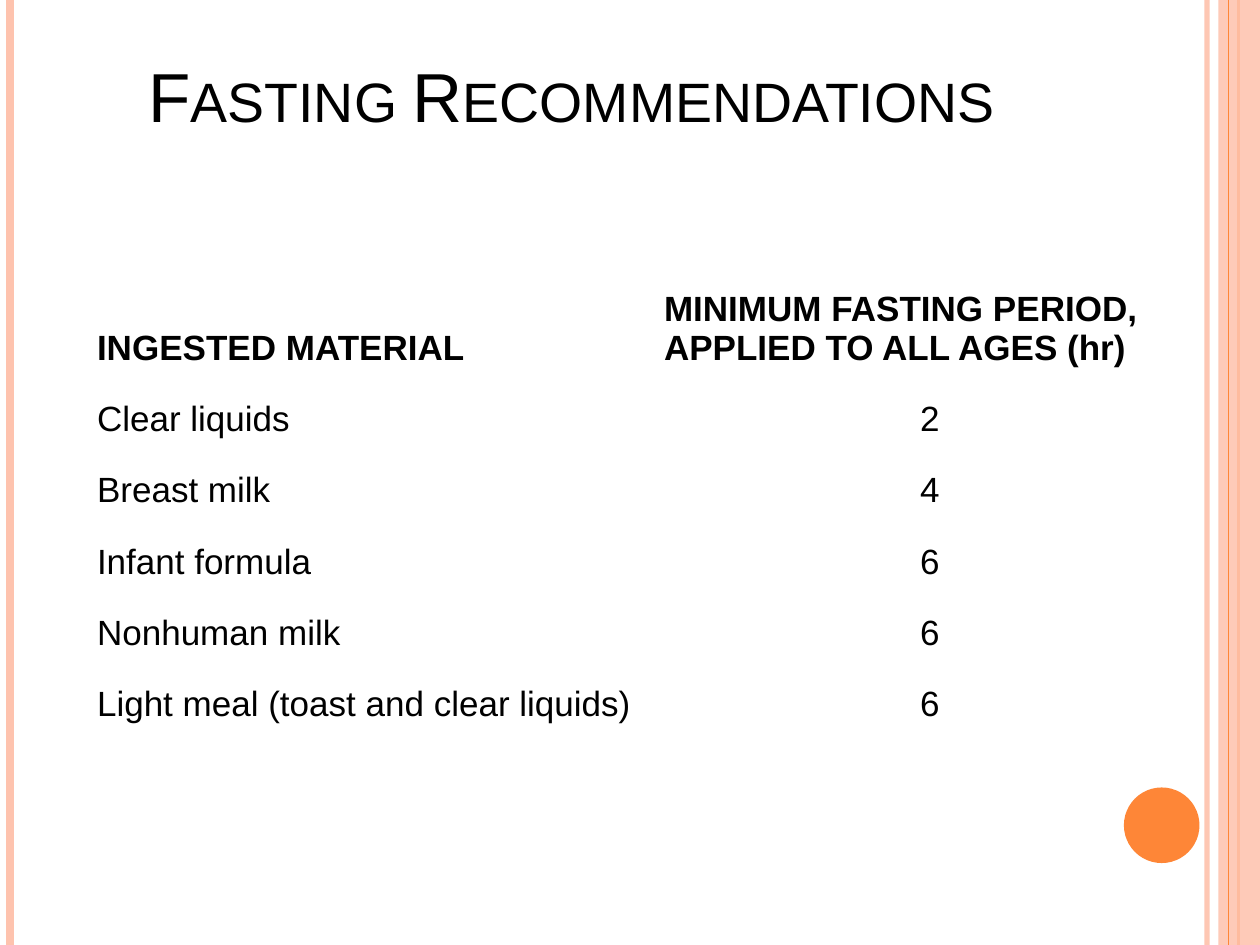
from dataclasses import dataclass

from lxml import etree
from pptx import Presentation
from pptx.dml.color import RGBColor
from pptx.enum.shapes import MSO_CONNECTOR, MSO_SHAPE
from pptx.enum.text import MSO_ANCHOR, PP_ALIGN
from pptx.oxml.ns import qn
from pptx.util import Inches, Pt

NO_STYLE_NO_GRID = "{2D5ABB26-0587-4C30-8999-92F81FD0307C}"

ROWS = [
    ("INGESTED MATERIAL", "MINIMUM FASTING PERIOD, APPLIED TO ALL AGES (hr)"),
    ("Clear liquids", "2"),
    ("Breast milk", "4"),
    ("Infant formula", "6"),
    ("Nonhuman milk", "6"),
    ("Light meal (toast and clear liquids)", "6"),
]


@dataclass(frozen=True)
class Theme:
    font: str = "Arial"
    text: RGBColor = RGBColor(0x00, 0x00, 0x00)
    accent: RGBColor = RGBColor(0xFE, 0x86, 0x37)
    tint: RGBColor = RGBColor(0xFE, 0xC3, 0xAE)
    title_size: float = 39.6
    table_size: float = 20


class SlideBuilder:
    def __init__(self, page, theme):
        self.page = page
        self.theme = theme

    def set_opacity(self, element, percent):
        color = next(element.iter(qn("a:srgbClr")))
        etree.SubElement(color, qn("a:alpha")).set("val", str(percent * 1000))

    def style(self, para, size, bold=False):
        para.font.name = self.theme.font
        para.font.size = Pt(size)
        para.font.bold = bold
        para.font.color.rgb = self.theme.text

    def vertical_rule(self, x, color, width, opacity=100):
        rule = self.page.shapes.add_connector(
            MSO_CONNECTOR.STRAIGHT, Inches(x), 0, Inches(x), Inches(7.5))
        rule.line.color.rgb = color
        rule.line.width = Pt(width)
        properties = rule._element.spPr
        etree.SubElement(properties, qn("a:effectLst"))
        if opacity < 100:
            self.set_opacity(properties, opacity)

    def shape(self, kind, left, top, width, height, color, opacity=100):
        shape = self.page.shapes.add_shape(
            kind, Inches(left), Inches(top), Inches(width), Inches(height))
        shape.shadow.inherit = False
        shape.fill.solid()
        shape.fill.fore_color.rgb = color
        shape.line.fill.background()
        if opacity < 100:
            self.set_opacity(shape._element.spPr, opacity)

    def title(self, text):
        box = self.page.shapes.add_textbox(
            Inches(0.5), Inches(0.3), Inches(8.17), Inches(1.25))
        frame = box.text_frame
        frame.word_wrap = True
        frame.vertical_anchor = MSO_ANCHOR.BOTTOM
        frame.margin_left = Inches(0.68)
        frame.margin_bottom = Inches(0.47)
        para = frame.paragraphs[0]
        span = para.add_run()
        span.text = text
        span._r.get_or_add_rPr().set("cap", "small")
        self.style(para, self.theme.title_size)

    def table(self, rows, left, top, column_widths, row_height):
        frame = self.page.shapes.add_table(
            len(rows), len(column_widths), Inches(left), Inches(top),
            Inches(sum(column_widths)), Inches(row_height * len(rows)))
        table = frame.table
        table.first_row = table.horz_banding = False
        next(table._tbl.iter(qn("a:tableStyleId"))).text = NO_STYLE_NO_GRID
        for column, width in zip(table.columns, column_widths):
            column.width = Inches(width)
        for row_index, row in enumerate(rows):
            for column_index, text in enumerate(row):
                self.cell(table.cell(row_index, column_index), text,
                          header=row_index == 0, centred=column_index > 0)

    def cell(self, cell, text, header, centred):
        cell.fill.background()
        cell.text = text
        para = cell.text_frame.paragraphs[0]
        self.style(para, self.theme.table_size, bold=header)
        if header:
            cell.vertical_anchor = MSO_ANCHOR.BOTTOM
        else:
            para.line_spacing = 1.5
            if centred:
                para.alignment = PP_ALIGN.CENTER


def main():
    deck = Presentation()
    deck.slide_width, deck.slide_height = Inches(10), Inches(7.5)
    theme = Theme()
    builder = SlideBuilder(deck.slides.add_slide(deck.slide_layouts[6]), theme)

    builder.vertical_rule(9.58, theme.tint, 3, opacity=93)
    builder.vertical_rule(0.08, theme.tint, 4.5)
    builder.vertical_rule(9.83, theme.accent, 1.5)
    builder.shape(MSO_SHAPE.RECTANGLE, 9.67, 0, 0.33, 7.5, theme.tint, opacity=87)
    builder.vertical_rule(9.75, theme.accent, 0.75)
    builder.shape(MSO_SHAPE.OVAL, 8.92, 6.25, 0.6, 0.6, theme.accent)

    builder.table(ROWS, 0.67, 2.25, (4.5, 4.42), 0.4)
    builder.title("Fasting Recommendations")
    deck.save("out.pptx")


if __name__ == "__main__":
    main()
